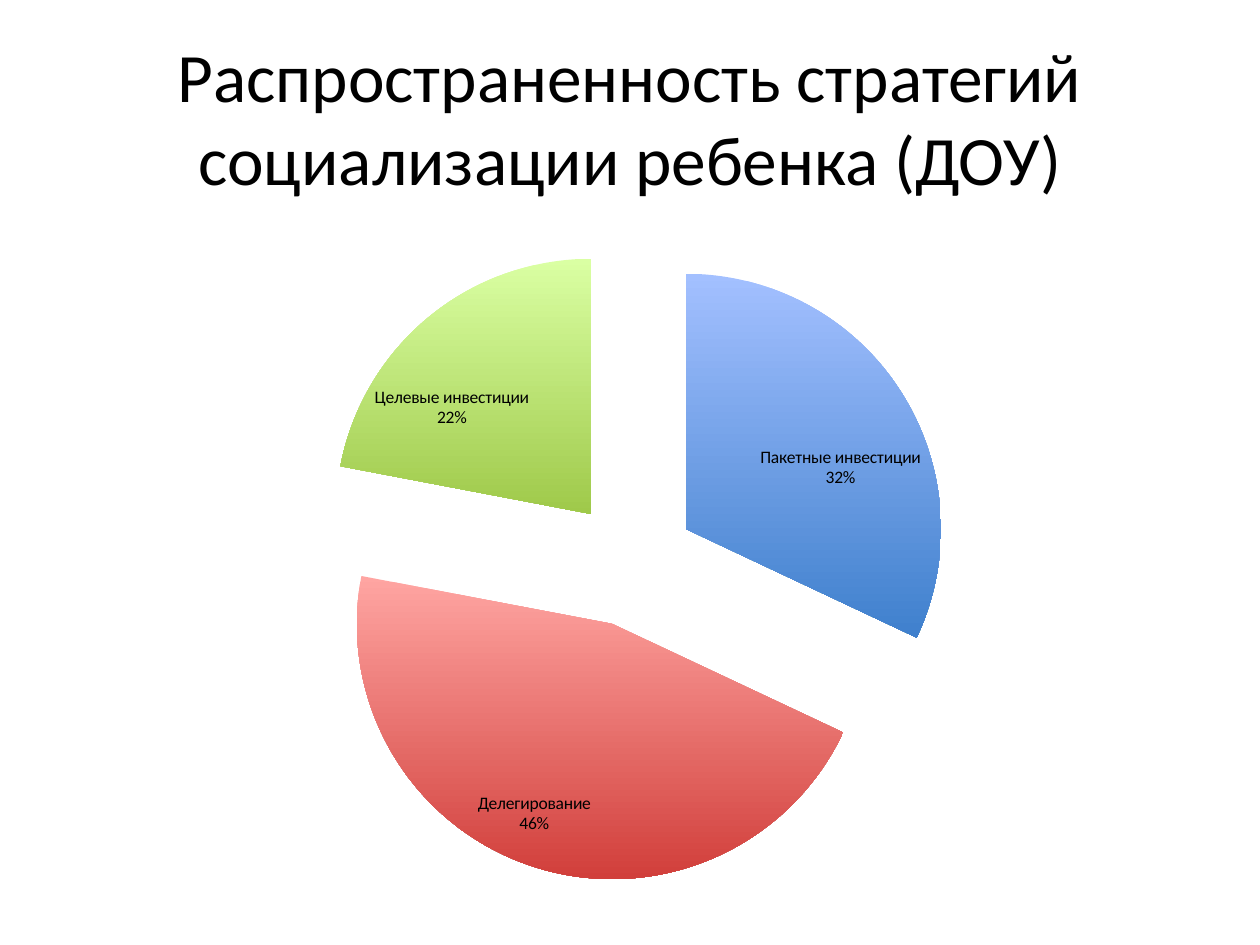
from pptx import Presentation
from pptx.chart.data import CategoryChartData
from pptx.dml.color import RGBColor
from pptx.enum.chart import XL_CHART_TYPE as ChartType, XL_LABEL_POSITION as LabelPosition
from pptx.enum.text import MSO_ANCHOR as Anchor, PP_ALIGN as Align
from pptx.oxml import parse_xml
from pptx.oxml.ns import nsdecls, qn
from pptx.util import Inches, Pt

FONT = "Calibri"
COLORS = {
    "text": "000000",
    "blue_top": "A3C0FF", "blue_bottom": "3F80CD",
    "red_top": "FFA5A2", "red_bottom": "D13F3B",
    "green_top": "DAFFA3", "green_bottom": "9FC94A",
}
STRATEGIES = [
    ("Пакетные инвестиции", 32, "blue"),
    ("Делегирование", 46, "red"),
    ("Целевые инвестиции", 22, "green"),
]
EXPLOSION = 25


def color(name):
    return RGBColor.from_string(COLORS[name])


def style_font(font, size):
    font.name = FONT
    font.size = Pt(size)
    font.color.rgb = color("text")


def add_title(page, text):
    box = page.shapes.add_textbox(Inches(0.5), Inches(0.3), Inches(9), Inches(1.25))
    frame = box.text_frame
    frame.word_wrap = True
    frame.vertical_anchor = Anchor.MIDDLE
    para = frame.paragraphs[0]
    para.text = text
    para.alignment = Align.CENTER
    style_font(para.font, 39.6)


def fill_slice(point, hue):
    fill = point.format.fill
    fill.gradient()
    fill.gradient_angle = 270
    for stop, end in zip(fill.gradient_stops, ("top", "bottom")):
        stop.color.rgb = color(f"{hue}_{end}")
    point.format.line.fill.background()


def explode_slices(series):
    for slice_xml in series._element.findall(qn("c:dPt")):
        explosion = parse_xml(f'<c:explosion {nsdecls("c")} val="{EXPLOSION}"/>')
        slice_xml.find(qn("c:spPr")).addprevious(explosion)


def add_labels(plot):
    plot.has_data_labels = True
    labels = plot.data_labels
    labels.show_value = False
    labels.show_category_name = True
    labels.show_percentage = True
    labels.position = LabelPosition.BEST_FIT
    style_font(labels.font, 10)


def add_strategy_pie(page):
    data = CategoryChartData()
    data.categories = [name for name, _, _ in STRATEGIES]
    data.add_series("Series 1", [share for _, share, _ in STRATEGIES])
    chart = page.shapes.add_chart(
        ChartType.PIE, Inches(0.53), Inches(1.8), Inches(8.97), Inches(5.34), data
    ).chart
    chart.has_title = False
    chart.has_legend = False
    style_font(chart.font, 10)
    plot = chart.plots[0]
    plot.vary_by_categories = True
    series = plot.series[0]
    for index, (_, _, hue) in enumerate(STRATEGIES):
        fill_slice(series.points[index], hue)
    explode_slices(series)
    add_labels(plot)


def main():
    deck = Presentation()
    deck.slide_width, deck.slide_height = Inches(10), Inches(7.5)
    page = deck.slides.add_slide(deck.slide_layouts[6])
    add_title(page, "Распространенность стратегий социализации ребенка (ДОУ)")
    add_strategy_pie(page)
    deck.save("out.pptx")


if __name__ == "__main__":
    main()
